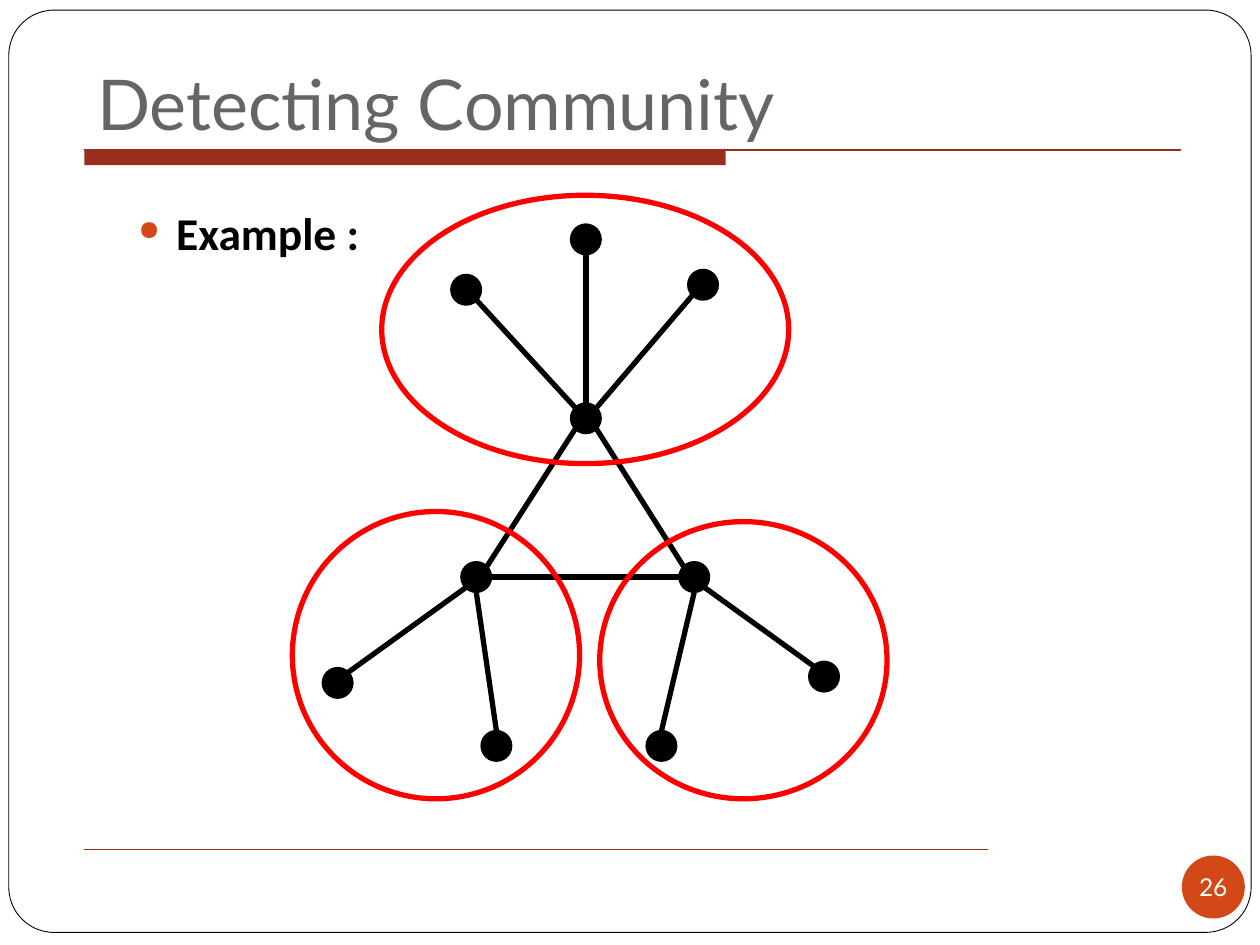
from lxml.etree import SubElement
from pptx import Presentation
from pptx.dml.color import RGBColor
from pptx.enum.shapes import MSO_CONNECTOR, MSO_SHAPE
from pptx.enum.text import MSO_ANCHOR, PP_ALIGN
from pptx.oxml.ns import qn
from pptx.util import Inches, Pt

BLACK = RGBColor(0, 0, 0)
WHITE = RGBColor(255, 255, 255)
RED = RGBColor(255, 0, 0)
BRICK = RGBColor(0x9B, 0x2D, 0x1F)
ORANGE = RGBColor(0xD3, 0x48, 0x17)
GRAY = RGBColor(0x69, 0x64, 0x64)

NODE_SIZE = 0.24
NODES = {  # left, top
    "hub": (4.53, 3.2), "west": (3.66, 4.46), "east": (5.39, 4.46),
    "hub mid": (4.53, 1.78), "hub left": (3.58, 2.18), "hub right": (5.46, 2.14),
    "west far": (2.56, 5.3), "west low": (3.82, 5.8),
    "east low": (5.13, 5.8), "east far": (6.42, 5.25),
}
EDGES = [  # node and rim point at each end
    ("hub mid", "S", "hub", "N"), ("hub right", "SW", "hub", "NE"),
    ("hub left", "SE", "hub", "NW"), ("hub", "SW", "west", "NE"),
    ("hub", "SE", "east", "NW"), ("west", "E", "east", "W"),
    ("west", "SW", "west far", "NE"), ("west", "S", "west low", "N"),
    ("east", "S", "east low", "N"), ("east", "SE", "east far", "NW"),
]
COMMUNITIES = [(3.03, 1.55, 3.23, 2.13), (2.32, 4.06, 2.28, 2.28), (4.76, 4.14, 2.28, 2.2)]


def add_figure(shapes, preset, box, fill=None, line=None, width=1):
    figure = shapes.add_shape(preset, *map(Inches, box))
    figure.shadow.inherit = False
    if fill is None:
        figure.fill.background()
    else:
        figure.fill.solid()
        figure.fill.fore_color.rgb = fill
    if line is None:
        figure.line.fill.background()
    else:
        figure.line.color.rgb = line
        figure.line.width = Pt(width)
    return figure


def add_line(shapes, start, end, color, width):
    line = shapes.add_connector(MSO_CONNECTOR.STRAIGHT, *map(Inches, (*start, *end)))
    line.line.color.rgb = color
    line.line.width = Pt(width)
    SubElement(line._element.spPr, qn("a:effectLst"))


def rim_point(node, compass):
    """Point on a node's circle in a compass direction."""
    left, top = NODES[node]
    dx = ("E" in compass) - ("W" in compass)
    dy = ("S" in compass) - ("N" in compass)
    reach = NODE_SIZE / 2 / (dx * dx + dy * dy) ** 0.5
    return left + NODE_SIZE / 2 + dx * reach, top + NODE_SIZE / 2 + dy * reach


def write(holder, text, frame_format, font_format, color):
    frame = holder.text_frame
    for name, value in frame_format.items():
        setattr(frame, name, value)
    paragraph = frame.paragraphs[0]
    run = paragraph.add_run()
    run.text = text
    for name, value in font_format.items():
        setattr(run.font, name, value)
    run.font.color.rgb = color
    return paragraph


def add_bullet(paragraph, char, color, percent):
    props = paragraph._p.get_or_add_pPr()
    props.set("marL", str(Inches(0.3)))
    props.set("indent", str(-Inches(0.3)))
    bullet_color = SubElement(props, qn("a:buClr"))
    SubElement(bullet_color, qn("a:srgbClr"), val=str(color))
    SubElement(props, qn("a:buSzPct"), val=str(percent * 1000))
    SubElement(props, qn("a:buChar"), char=char)


def main():
    prs = Presentation()
    prs.slide_width, prs.slide_height = Inches(10), Inches(7.5)
    slide = prs.slides.add_slide(prs.slide_layouts[5])
    shapes = slide.shapes
    title = shapes.title

    frame = add_figure(shapes, MSO_SHAPE.ROUNDED_RECTANGLE, (0.07, 0.08, 9.86, 7.32),
                       WHITE, BLACK, 0.5)
    frame.adjustments[0] = 0.049
    # The title goes above the frame
    frame._element.addnext(title._element)

    add_figure(shapes, MSO_SHAPE.RECTANGLE, (0.67, 1.19, 5.09, 0.12), BRICK)
    add_line(shapes, (0.67, 1.19), (9.37, 1.19), BRICK, 0.75)
    add_line(shapes, (0.67, 6.74), (7.84, 6.74), BRICK, 0.25)

    badge = add_figure(shapes, MSO_SHAPE.OVAL, (9.38, 6.79, 0.5, 0.5), ORANGE)
    no_margins = dict.fromkeys(
        ("margin_left", "margin_top", "margin_right", "margin_bottom"), 0)
    number = write(badge, "26",
                   {**no_margins, "word_wrap": False, "vertical_anchor": MSO_ANCHOR.MIDDLE},
                   {"size": Pt(14), "name": "Lato"}, WHITE)
    number.alignment = PP_ALIGN.CENTER

    title.left, title.top, title.width, title.height = map(Inches, (0.67, 0, 8.5, 1.25))
    heading = write(title, "Detecting Community",
                    {"vertical_anchor": MSO_ANCHOR.BOTTOM, "margin_bottom": Inches(0.1),
                     "word_wrap": True},
                    {"size": Pt(40), "name": "Lato"}, GRAY)
    heading.alignment = PP_ALIGN.LEFT

    for left, top in NODES.values():
        add_figure(shapes, MSO_SHAPE.OVAL, (left, top, NODE_SIZE, NODE_SIZE), BLACK, BLACK)
    for start, start_side, end, end_side in EDGES:
        add_line(shapes, rim_point(start, start_side), rim_point(end, end_side), BLACK, 3)
    for box in COMMUNITIES:
        add_figure(shapes, MSO_SHAPE.OVAL, box, line=RED, width=3)

    body = shapes.add_textbox(*map(Inches, (1, 1.58, 9, 5)))
    example = write(body, "Example :", {"word_wrap": True},
                    {"size": Pt(26), "name": "Calibri", "bold": True}, BLACK)
    example.space_before = Pt(5.8)
    add_bullet(example, "●", ORANGE, 60)

    prs.save("out.pptx")


if __name__ == "__main__":
    main()
